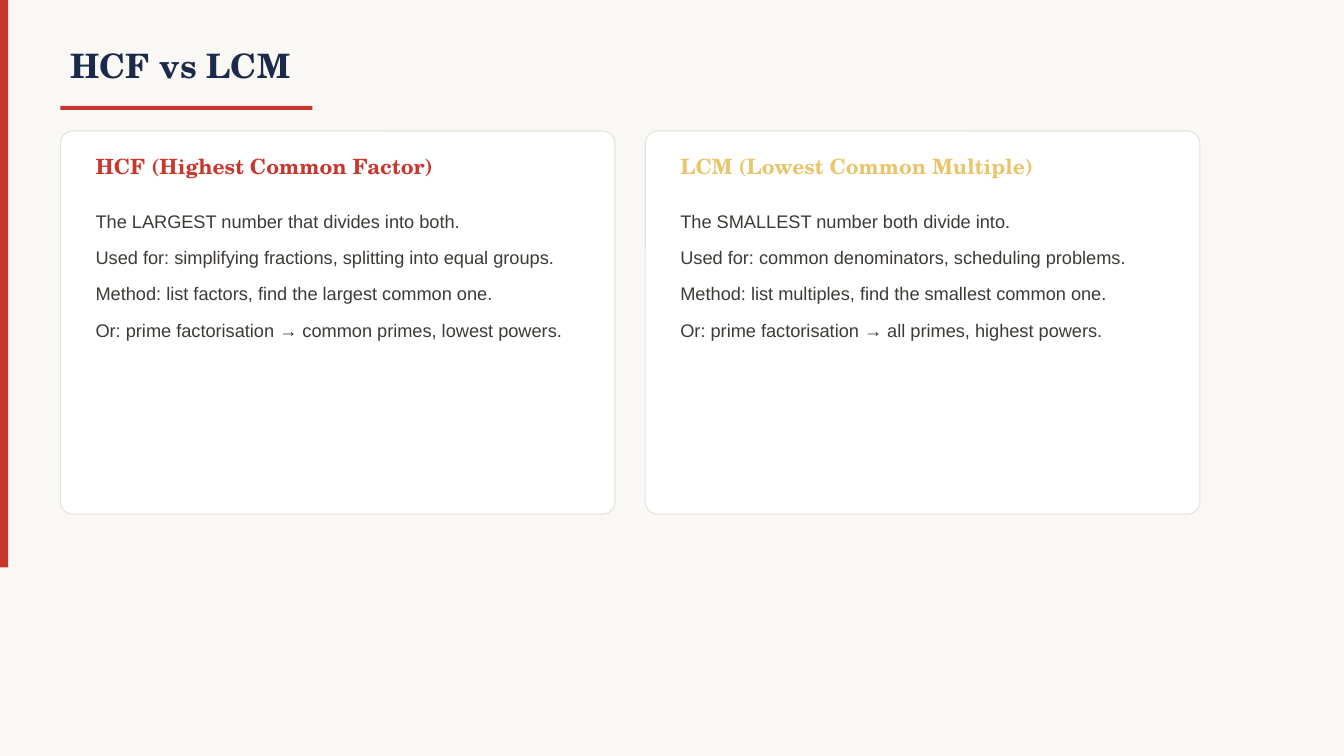
from pptx import Presentation
from pptx.dml.color import RGBColor
from pptx.enum.shapes import MSO_SHAPE
from pptx.enum.text import MSO_ANCHOR
from pptx.util import Inches, Pt

RECT, ROUND = MSO_SHAPE.RECTANGLE, MSO_SHAPE.ROUNDED_RECTANGLE
TOP, MIDDLE = MSO_ANCHOR.TOP, MSO_ANCHOR.MIDDLE

CELL = 0.1  # inches per grid column and row
RED, GOLD, NAVY, INK = "C8372D", "E9C46A", "1B2A4A", "3D3A36"
PAPER, WHITE, EDGE = "FAF8F5", "FFFFFF", "E5E2DC"
SERIF, SANS = "TeX Gyre Schola", "Arial"

CARDS = [
    ("HCF (Highest Common Factor)", RED, [
        "The LARGEST number that divides into both.",
        "Used for: simplifying fractions, splitting into equal groups.",
        "Method: list factors, find the largest common one.",
        "Or: prime factorisation → common primes, lowest powers.",
    ]),
    ("LCM (Lowest Common Multiple)", GOLD, [
        "The SMALLEST number both divide into.",
        "Used for: common denominators, scheduling problems.",
        "Method: list multiples, find the smallest common one.",
        "Or: prime factorisation → all primes, highest powers.",
    ]),
]


def color(code):
    return RGBColor.from_string(code)


def grid(*cells):
    return [Inches(cell * CELL) for cell in cells]


def write(par, text, font=SANS, size=13, ink=INK, bold=False, line=None, after=None):
    run = par.add_run()
    run.text = text
    run.font.name = font
    run.font.size = Pt(size)
    run.font.bold = bold
    run.font.color.rgb = color(ink)
    if line:
        par.line_spacing = line
    if after:
        par.space_after = Pt(after)


class Deck:
    def __init__(self, width, height):
        self.prs = Presentation()
        self.prs.slide_width, self.prs.slide_height = Inches(width), Inches(height)
        self.slide = self.prs.slides.add_slide(self.prs.slide_layouts[6])
        back = self.slide.background.fill
        back.solid()
        back.fore_color.rgb = color(PAPER)

    def block(self, col, row, wide, high, fill, kind=RECT, edge=None):
        shape = self.slide.shapes.add_shape(kind, *grid(col, row, wide, high))
        shape.shadow.inherit = False
        shape.fill.solid()
        shape.fill.fore_color.rgb = color(fill)
        if edge:
            shape.line.color.rgb = color(edge)
            shape.line.width = Pt(0.75)
        else:
            shape.line.fill.background()
        return shape

    def text(self, col, row, wide, high, lines, anchor=TOP, **style):
        frame = self.slide.shapes.add_textbox(*grid(col, row, wide, high)).text_frame
        frame.word_wrap = True
        frame.vertical_anchor = anchor
        for spot, line in enumerate(lines):
            par = frame.add_paragraph() if spot else frame.paragraphs[0]
            write(par, line, **style)

    def card(self, col, row, head, ink, lines):
        panel = self.block(col, row, 55, 38, WHITE, ROUND, EDGE)
        panel.adjustments[0] = 0.032
        self.text(col + 2.5, row + 1.5, 50, 4, [head], MIDDLE,
                  font=SERIF, size=15, ink=ink, bold=True)
        self.text(col + 2.5, row + 6.5, 50, 29, lines, line=1.4, after=4)


def main():
    deck = Deck(13.33, 7.5)

    # Side bar, title and rule
    deck.block(0, 0, 0.8, 56.3, RED)
    deck.text(6, 3, 100, 7, ["HCF vs LCM"], MIDDLE,
              font=SERIF, size=24, ink=NAVY, bold=True)
    deck.block(6, 10.5, 25, 0.4, RED)

    # Two cards side by side
    for spot, (head, ink, lines) in enumerate(CARDS):
        deck.card(6 + 58 * spot, 13, head, ink, lines)

    deck.prs.save("out.pptx")


if __name__ == "__main__":
    main()
